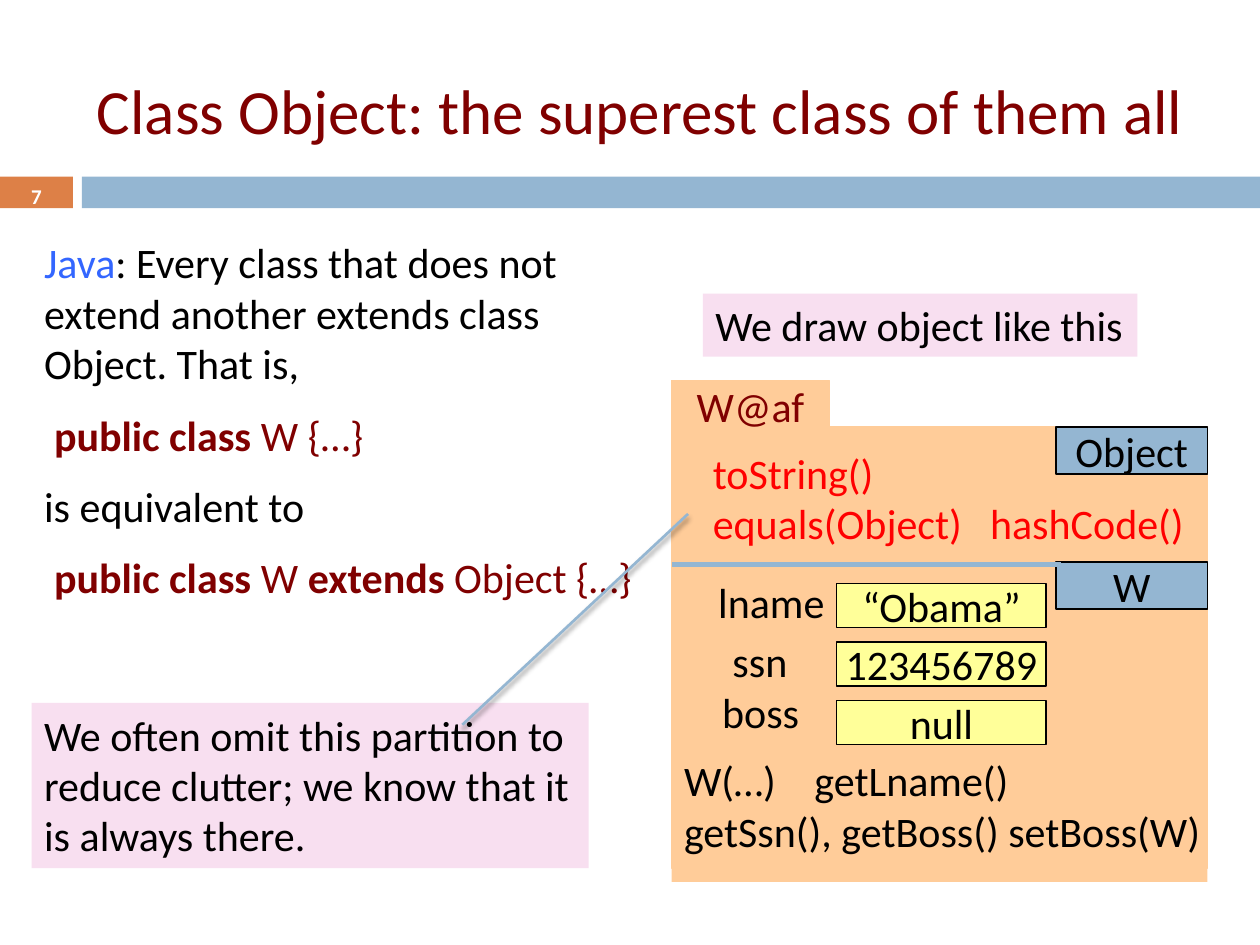
from lxml import etree
from pptx import Presentation
from pptx.dml.color import RGBColor
from pptx.enum.shapes import MSO_CONNECTOR, MSO_SHAPE
from pptx.enum.text import MSO_ANCHOR, PP_ALIGN
from pptx.oxml.ns import qn
from pptx.util import Cm, Pt

LEFT, CENTER = PP_ALIGN.LEFT, PP_ALIGN.CENTER
TOP, MIDDLE = MSO_ANCHOR.TOP, MSO_ANCHOR.MIDDLE
RECTANGLE, STRAIGHT = MSO_SHAPE.RECTANGLE, MSO_CONNECTOR.STRAIGHT
BLACK, WHITE, MAROON, RED, JAVA_BLUE = "000000", "FFFFFF", "800000", "FF0000", "3366FF"
ORANGE, STEEL, PEACH, YELLOW, PINK = "DD8047", "94B6D2", "FFCC99", "FFFF99", "F8DFF0"

TITLE = "Class Object: the superest class of them all"
INDENT = 0.2
BODY = [
    (0, [("Java", JAVA_BLUE, False),
         (": Every class that does not\nextend another extends class\nObject. That is,", BLACK, False)]),
    (INDENT, [("public class ", MAROON, True), ("W {…}", MAROON, False)]),
    (0, [("is equivalent to", BLACK, False)]),
    (INDENT, [("public class ", MAROON, True), ("W ", MAROON, False),
              ("extends", MAROON, True), (" Object {…}", MAROON, False)]),
]
FIELDS = [
    ("lname", (14, 11.76, 3.1), "“Obama”"),
    ("ssn", (13.77, 12.95, 3.1), "123456789"),
    ("boss", (14, 13.97, 2.67), "null"),
]
INHERITED = ["toString()", "equals(Object)\thashCode()"]
DECLARED = ["W(…)\tgetLname()", "getSsn(), getBoss() setBoss(W)"]
DRAW_NOTE = "We draw object like this"
OMIT_NOTE = "We often omit this partition to reduce clutter; we know that it is always there."

OBJECT_LEFT, OBJECT_TOP, OBJECT_WIDTH = 13.54, 8.61, 10.8
PARTITION_TOP, LABEL_WIDTH, LABEL_HEIGHT = 11.33, 3.05, 0.95
LABEL_LEFT = OBJECT_LEFT + OBJECT_WIDTH - LABEL_WIDTH
VALUE_LEFT, VALUE_TOP, VALUE_PITCH = 16.87, 11.76, 1.18


def color(value):
    """Turn a hex string into a colour."""
    return RGBColor.from_string(value)


def add_span(para, text, ink, size=24, bold=False):
    """Add formatted text to a paragraph, with a line break at each newline."""
    for number, line in enumerate(text.split("\n")):
        if number:
            para.add_line_break()
        span = para.add_run()
        span.text = line
        for name, value in {"name": "Calibri", "size": Pt(size), "bold": bold}.items():
            setattr(span.font, name, value)
        span.font.color.rgb = color(ink)


def set_frame(frame, anchor, wrap):
    """Set the anchor and wrapping of a text frame."""
    for name, value in {"vertical_anchor": anchor, "word_wrap": wrap}.items():
        setattr(frame, name, value)


def write(box, lines, ink=BLACK, align=LEFT, anchor=TOP, wrap=False, tab=None, **font):
    """Write lines of one format into a box."""
    frame = box.text_frame
    set_frame(frame, anchor, wrap)
    for number, line in enumerate(lines):
        para = frame.add_paragraph() if number else frame.paragraphs[0]
        para.alignment = align
        add_span(para, line, ink, **font)
        if tab:
            stops = etree.SubElement(para._p.get_or_add_pPr(), qn("a:tabLst"))
            etree.SubElement(stops, qn("a:tab"), pos=str(Cm(tab)), algn="l")


def add_box(page, place, fill, line=None):
    """Add a flat rectangle."""
    box = page.shapes.add_shape(RECTANGLE, *map(Cm, place))
    box.shadow.inherit = False
    box.fill.solid()
    box.fill.fore_color.rgb = color(fill)
    if line:
        box.line.color.rgb = color(line)
        box.line.width = Pt(0.75)
    else:
        box.line.fill.background()
    return box


def add_label(page, place, text, fill, line=None, ink=BLACK):
    """Add a rectangle with one centred line."""
    write(add_box(page, place, fill, line), [text], ink, CENTER, MIDDLE)


def add_line(page, ends, width, shadow=False):
    """Add a straight line, with a soft drop shadow if asked."""
    line = page.shapes.add_connector(STRAIGHT, *map(Cm, ends))
    line.line.color.rgb = color(STEEL)
    line.line.width = Pt(width)
    effects = etree.SubElement(line._element.spPr, qn("a:effectLst"))
    if shadow:
        drop = etree.SubElement(effects, qn("a:outerShdw"), blurRad=str(Pt(3)),
                                dist=str(Pt(2.4)), dir="5400000", rotWithShape="0")
        ink = etree.SubElement(drop, qn("a:srgbClr"), val=BLACK)
        etree.SubElement(ink, qn("a:alpha"), val="45000")


def add_heading(page):
    """Add the title and the band with the page number."""
    add_box(page, (0, 3.56, 1.47, 0.64), ORANGE)
    add_box(page, (1.65, 3.56, 23.75, 0.64), STEEL)
    title = page.shapes.title
    place = zip(("left", "top", "width", "height"), (1.7, 0.84, 22.66, 2.74))
    for name, value in place:
        setattr(title, name, Cm(value))
    write(title, [TITLE], MAROON, anchor=MIDDLE, wrap=True, size=36)
    number = page.shapes.add_textbox(*map(Cm, (0, 3.61, 1.47, 0.69)))
    write(number, ["7"], WHITE, CENTER, MIDDLE, True, size=12, bold=True)


def add_body(page):
    """Add the explanation on the left."""
    frame = page.shapes.add_textbox(*map(Cm, (0.64, 4.65, 22.66, 12.5))).text_frame
    set_frame(frame, TOP, True)
    for number, (indent, spans) in enumerate(BODY):
        para = frame.add_paragraph() if number else frame.paragraphs[0]
        para.space_after = Pt(12)
        para._p.get_or_add_pPr().set("marL", str(Cm(indent)))
        for text, ink, bold in spans:
            add_span(para, text, ink, bold=bold)


def add_object(page):
    """Add the drawing of the object with its two partitions."""
    add_box(page, (OBJECT_LEFT, OBJECT_TOP, OBJECT_WIDTH, 8.89), PEACH, PEACH)
    add_label(page, (OBJECT_LEFT, 7.67, 3.18, 1.02), "W@af", PEACH, PEACH, MAROON)
    for number, (name, place, value) in enumerate(FIELDS):
        add_label(page, (*place, 0.74), name, PEACH)
        top = VALUE_TOP + number * VALUE_PITCH
        add_label(page, (VALUE_LEFT, top, 4.22, 0.89), value, YELLOW, BLACK)
    methods = add_box(page, (OBJECT_LEFT, 15.09, OBJECT_WIDTH, 2.69), PEACH)
    write(methods, DECLARED, tab=2.63)
    for text, top in (("W", PARTITION_TOP), ("Object", OBJECT_TOP)):
        add_label(page, (LABEL_LEFT, top, LABEL_WIDTH, LABEL_HEIGHT), text, STEEL, BLACK)
    inherited = page.shapes.add_textbox(*map(Cm, (14.12, 8.89, 10, 2.31)))
    write(inherited, INHERITED, RED, tab=5.59)
    add_line(page, (OBJECT_LEFT, 11.38, 21.39, 11.38), 3.25)


def main():
    """Build the slide and save it."""
    deck = Presentation()
    deck.slide_width, deck.slide_height = Cm(25.4), Cm(19.05)
    page = deck.slides.add_slide(deck.slide_layouts[5])
    add_heading(page)
    add_body(page)
    add_object(page)
    write(add_box(page, (14.17, 5.92, 8.76, 1.27), PINK), [DRAW_NOTE])
    write(add_box(page, (0.64, 14.17, 11.23, 3.33), PINK), [OMIT_NOTE], wrap=True)
    add_line(page, (13.87, 10.36, 9.32, 14.61), 1.5, shadow=True)
    deck.save("out.pptx")


if __name__ == "__main__":
    main()
